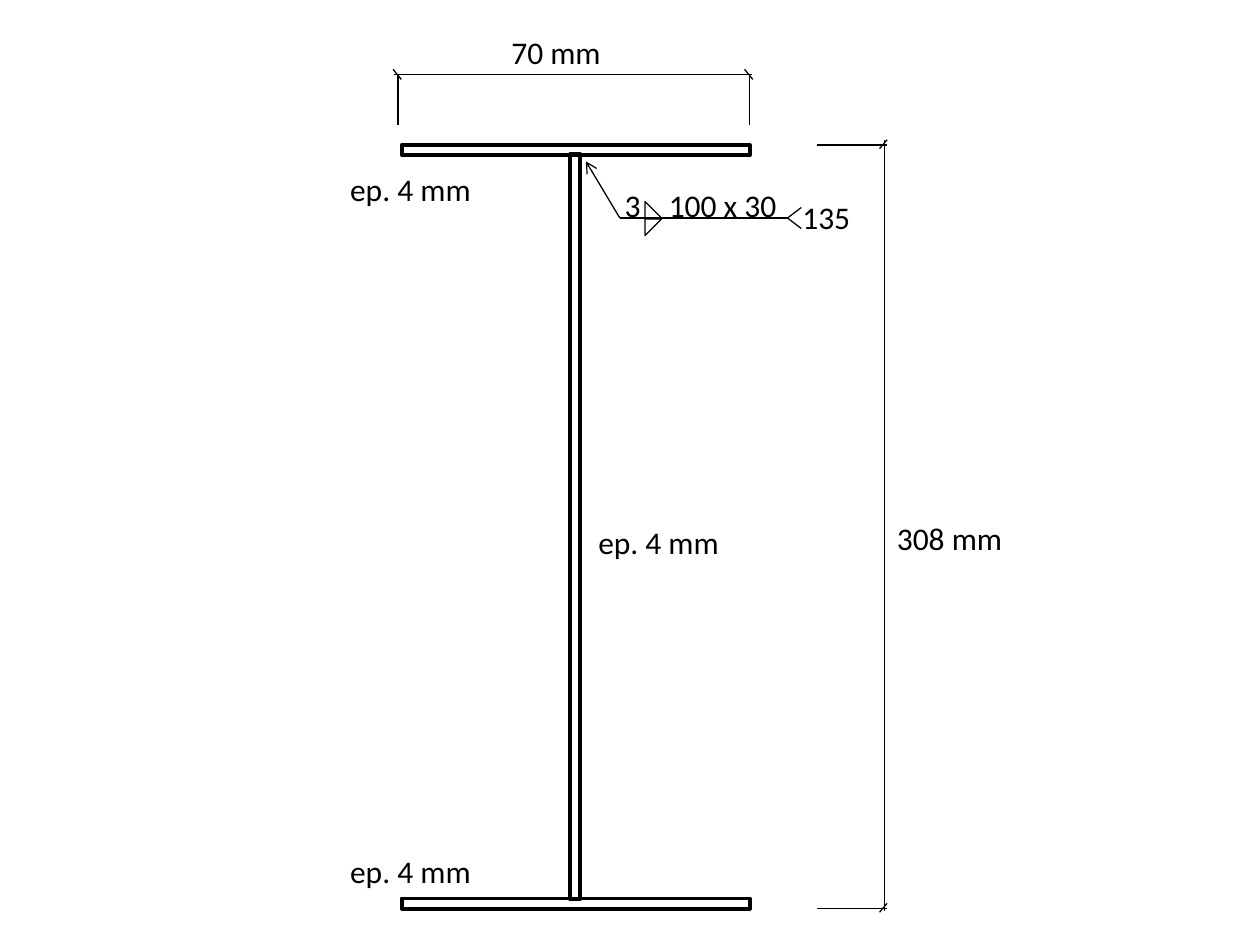
"""Draw the welded I-section with its dimensions and weld symbol."""
from typing import NamedTuple

from lxml import etree
from pptx import Presentation
from pptx.dml.color import RGBColor
from pptx.enum.shapes import MSO_CONNECTOR, MSO_SHAPE
from pptx.enum.text import MSO_AUTO_SIZE
from pptx.oxml.ns import qn
from pptx.util import Pt

STRAIGHT = MSO_CONNECTOR.STRAIGHT
RECTANGLE = MSO_SHAPE.RECTANGLE
RIGHT_TRIANGLE = MSO_SHAPE.RIGHT_TRIANGLE
FIT_SHAPE = MSO_AUTO_SIZE.SHAPE_TO_FIT_TEXT

COLORS = {"ink": "000000"}
INK = RGBColor.from_string(COLORS["ink"])
FONT = "Calibri"
TEXT_SIZE = 18
LABEL_HEIGHT = 29.1
THIN, THICK = 0.75, 2.25

PLATE = 5.8
FLANGE_LEFT, FLANGE_WIDTH = 229.7, 198.7
FLANGE_TOPS = (82.8, 513.4)
WEB_LEFT, WEB_TOP, WEB_HEIGHT = 325.8, 88.2, 425.5

DEPTH_X, DEPTH_ENDS = 505.4, (82.8, 519.1)
WIDTH_Y, WIDTH_ENDS = 42.5, (227.5, 428.4)

WELD_LEFT, WELD_SIZE = 368.6, 9.4
WELD_TOP, WELD_BOTTOM = 115.2, 125.2
ELBOW_X, REFERENCE_Y, TAIL_X = 354.2, 124.6, 450


class Outline(NamedTuple):
    preset: int
    left: float
    top: float
    width: float
    height: float
    weight: float


class Segment(NamedTuple):
    x1: float
    y1: float
    x2: float
    y2: float


class Label(NamedTuple):
    text: str
    left: float
    top: float
    width: float


PLATES = [
    *(Outline(RECTANGLE, FLANGE_LEFT, top, FLANGE_WIDTH, PLATE, THICK)
      for top in FLANGE_TOPS),
    Outline(RECTANGLE, WEB_LEFT, WEB_TOP, PLATE, WEB_HEIGHT, THICK),
]
UPPER_WELD, LOWER_WELD = (
    Outline(RIGHT_TRIANGLE, WELD_LEFT, top, WELD_SIZE, WELD_SIZE, THIN)
    for top in (WELD_TOP, WELD_BOTTOM)
)
DEPTH_DIMENSION = [
    *(Segment(502.6, y + 2.2, 506.9, y - 2.9) for y in DEPTH_ENDS),
    *(Segment(466.6, y, 506.9, y) for y in DEPTH_ENDS),
    Segment(DEPTH_X, 520.6, DEPTH_X, 79.9),
]
WIDTH_DIMENSION = [
    *(Segment(x + 1.8, 45.4, x - 2.9, 39.6) for x in WIDTH_ENDS),
    *(Segment(x, WIDTH_Y, x, 71.3) for x in WIDTH_ENDS),
    Segment(429.8, WIDTH_Y, 225.4, WIDTH_Y),
]
WELD_TAIL = [
    Segment(TAIL_X, REFERENCE_Y, TAIL_X + 7.9, REFERENCE_Y + offset)
    for offset in (-6, 6)
]
LABELS = [
    Label("3", 349.9, 103, 23.7),
    Label("308 mm", 505.4, 293, 75.6),
    Label("ep. 4 mm", 334.8, 295.2, 84.2),
    Label("ep. 4 mm", 193, 93.6, 84.2),
    Label("ep. 4 mm", 193, 483.1, 84.2),
    Label("70 mm", 285.1, 15.1, 66.2),
    Label("100 x 30", 375.1, 103, 77),
    Label("135", 451.4, 109.4, 42.5),
]


def draw_outline(shapes, outline: Outline, flipped: bool = False) -> None:
    """Draw an unfilled preset shape, optionally flipped vertically."""
    figure = shapes.add_shape(
        outline.preset, Pt(outline.left), Pt(outline.top),
        Pt(outline.width), Pt(outline.height))
    figure.shadow.inherit = False
    figure.fill.background()
    figure.line.color.rgb = INK
    figure.line.width = Pt(outline.weight)
    if flipped:
        figure.element.spPr.find(qn("a:xfrm")).set("flipV", "1")


def draw_segment(shapes, segment: Segment, arrow: bool = False) -> None:
    """Draw a thin line, optionally with an open arrowhead at its end."""
    stroke = shapes.add_connector(STRAIGHT, *(Pt(value) for value in segment))
    stroke.line.color.rgb = INK
    stroke.line.width = Pt(THIN)
    properties = stroke.element.spPr
    if arrow:
        etree.SubElement(properties.find(qn("a:ln")), qn("a:tailEnd"), type="arrow")
    etree.SubElement(properties, qn("a:effectLst"))


def draw_group(shapes, segments: list[Segment]) -> None:
    """Draw lines that belong together as one group."""
    group = shapes.add_group_shape()
    for segment in segments:
        draw_segment(group.shapes, segment)


def draw_label(shapes, label: Label) -> None:
    """Write a one-line label."""
    box = shapes.add_textbox(
        Pt(label.left), Pt(label.top), Pt(label.width), Pt(LABEL_HEIGHT))
    frame = box.text_frame
    frame.word_wrap = False
    frame.auto_size = FIT_SHAPE
    run = frame.paragraphs[0].add_run()
    run.text = label.text
    run.font.name = FONT
    run.font.size = Pt(TEXT_SIZE)
    run.font.color.rgb = INK


def main() -> None:
    """Build and save the slide."""
    deck = Presentation()
    deck.slide_width, deck.slide_height = Pt(720), Pt(540)
    shapes = deck.slides.add_slide(deck.slide_layouts[6]).shapes

    for plate in PLATES:
        draw_outline(shapes, plate)
    draw_group(shapes, DEPTH_DIMENSION)
    draw_group(shapes, WIDTH_DIMENSION)
    draw_segment(shapes, Segment(ELBOW_X, REFERENCE_Y, 334.8, 92.2), arrow=True)
    draw_segment(shapes, Segment(ELBOW_X, REFERENCE_Y, TAIL_X, REFERENCE_Y))
    draw_outline(shapes, UPPER_WELD)
    draw_outline(shapes, LOWER_WELD, flipped=True)
    draw_group(shapes, WELD_TAIL)
    for label in LABELS:
        draw_label(shapes, label)

    deck.save("out.pptx")


if __name__ == "__main__":
    main()
